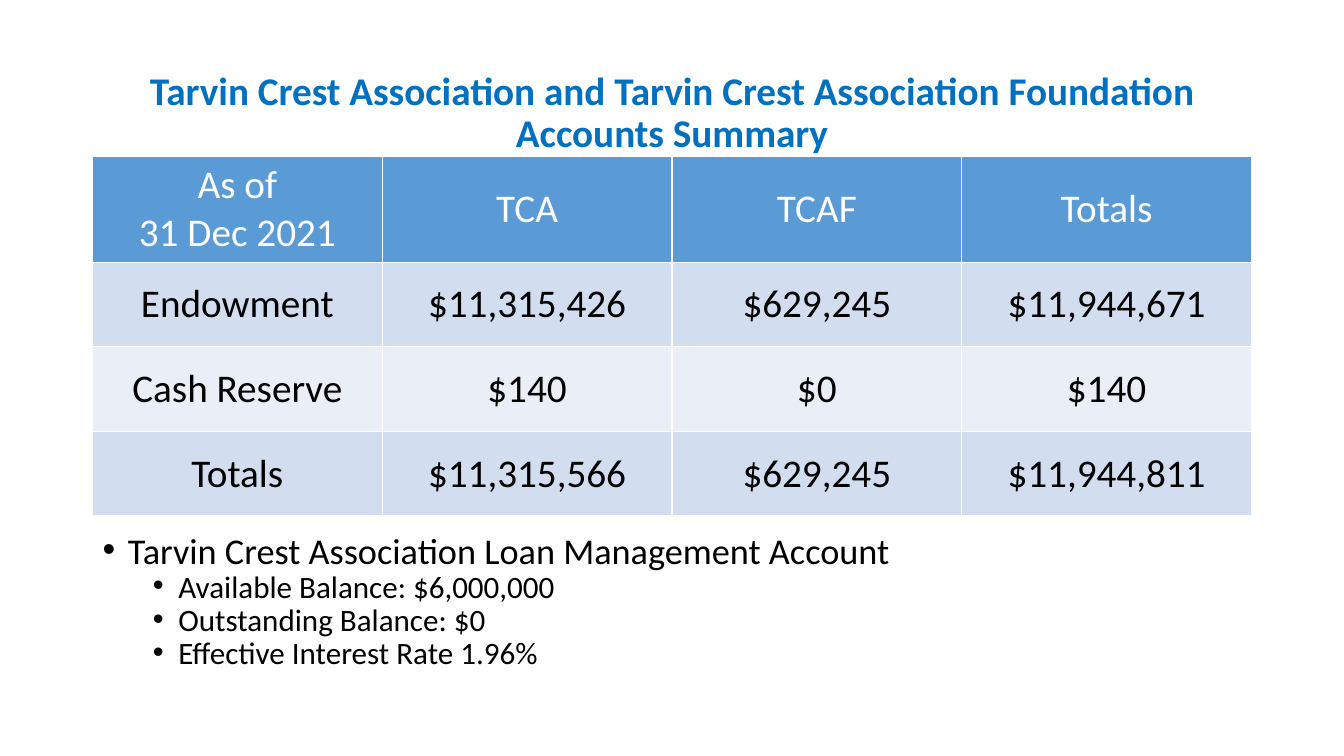
from lxml import etree
from pptx import Presentation
from pptx.dml.color import RGBColor
from pptx.enum import text
from pptx.oxml import ns
from pptx.util import Cm, Pt

BLUE = RGBColor(0x00, 0x70, 0xC0)
HEADER = RGBColor(0x5B, 0x9B, 0xD5)
BAND_DARK = RGBColor(0xD2, 0xDE, 0xEF)
BAND_LIGHT = RGBColor(0xEA, 0xEF, 0xF7)
WHITE = RGBColor(0xFF, 0xFF, 0xFF)
BLACK = RGBColor(0x00, 0x00, 0x00)

LEFT, WIDTH = Cm(2.33), Cm(29.21)

ACCOUNTS = [
    ["As of\n31 Dec 2021", "TCA", "TCAF", "Totals"],
    ["Endowment", "$11,315,426", "$629,245", "$11,944,671"],
    ["Cash Reserve", "$140", "$0", "$140"],
    ["Totals", "$11,315,566", "$629,245", "$11,944,811"],
]
LOAN = [
    (0, "Tarvin Crest Association Loan Management Account"),
    (1, "Available Balance: $6,000,000"),
    (1, "Outstanding Balance: $0"),
    (1, "Effective Interest Rate 1.96%"),
]


class SlideBuilder:
    """Holds the slide and its style."""

    font = "Calibri"
    size = 28

    def __init__(self, prs):
        self.s = prs.slides.add_slide(prs.slide_layouts[1])

    def format(self, p, color, size=None, bold=False):
        for r in p.runs:
            r.font.name = self.font
            r.font.size = Pt(size or self.size)
            r.font.bold = bold
            r.font.color.rgb = color

    def place(self, sp, top, height):
        sp.left, sp.top, sp.width, sp.height = LEFT, top, WIDTH, height
        tf = sp.text_frame
        tf.word_wrap = True
        tf.auto_size = text.MSO_AUTO_SIZE.NONE
        return tf

    def title(self, wording, top, height):
        tf = self.place(self.s.shapes.title, top, height)
        tf.text = wording
        tf.vertical_anchor = text.MSO_ANCHOR.MIDDLE
        p = tf.paragraphs[0]
        p.alignment = text.PP_ALIGN.CENTER
        p.line_spacing = 0.9
        self.format(p, BLUE, bold=True)

    def bullets(self, items, top, height):
        tf = self.place(self.s.placeholders[1], top, height)
        tf.vertical_anchor = text.MSO_ANCHOR.TOP
        tf.text = "\n".join(wording for _, wording in items)
        for p, (level, _) in zip(tf.paragraphs, items):
            p.level = level
            p.line_spacing = 0.7
            p.space_before = Pt(5 if level else 10)
            self.format(p, BLACK, 22.2 if level else 25.9)
            pPr = p._p.get_or_add_pPr()
            pPr.set("marL", str(Cm(1.91 if level else 0.64)))
            pPr.set("indent", str(-Cm(0.64)))
            etree.SubElement(pPr, ns.qn("a:buFont"), typeface="Arial")
            etree.SubElement(pPr, ns.qn("a:buChar"), char="•")

    def border(self, cell, edge, width):
        tcPr = cell._tc.get_or_add_tcPr()
        ln = etree.SubElement(tcPr, ns.qn(f"a:ln{edge}"), w=str(Pt(width)))
        fill = etree.SubElement(ln, ns.qn("a:solidFill"))
        etree.SubElement(fill, ns.qn("a:srgbClr"), val=str(WHITE))

    def table(self, rows, top, heights):
        frame = self.s.shapes.add_table(
            len(rows), len(rows[0]), LEFT, top, WIDTH, sum(heights))
        table = frame.table
        for i, (row, height) in enumerate(zip(rows, heights)):
            table.rows[i].height = height
            fill = BAND_DARK if i % 2 else BAND_LIGHT
            for j, wording in enumerate(row):
                cell = table.cell(i, j)
                cell.text = wording
                cell.vertical_anchor = text.MSO_ANCHOR.MIDDLE
                for edge in "LRTB":
                    self.border(cell, edge, 1)
                cell.fill.solid()
                cell.fill.fore_color.rgb = fill if i else HEADER
                for p in cell.text_frame.paragraphs:
                    p.alignment = text.PP_ALIGN.CENTER
                    self.format(p, BLACK if i else WHITE)


def main():
    prs = Presentation()
    prs.slide_width, prs.slide_height = Cm(33.87), Cm(19.05)
    slide = SlideBuilder(prs)

    # Heading
    slide.title("Tarvin Crest Association and Tarvin Crest Association "
                "Foundation Accounts Summary", Cm(1.02), Cm(3.68))

    # Loan account details
    slide.bullets(LOAN, Cm(13.49), Cm(3.68))

    # Account balances
    slide.table(ACCOUNTS, Cm(3.94), [Cm(2.67)] + [Cm(2.13)] * 3)

    prs.save("out.pptx")


if __name__ == "__main__":
    main()
